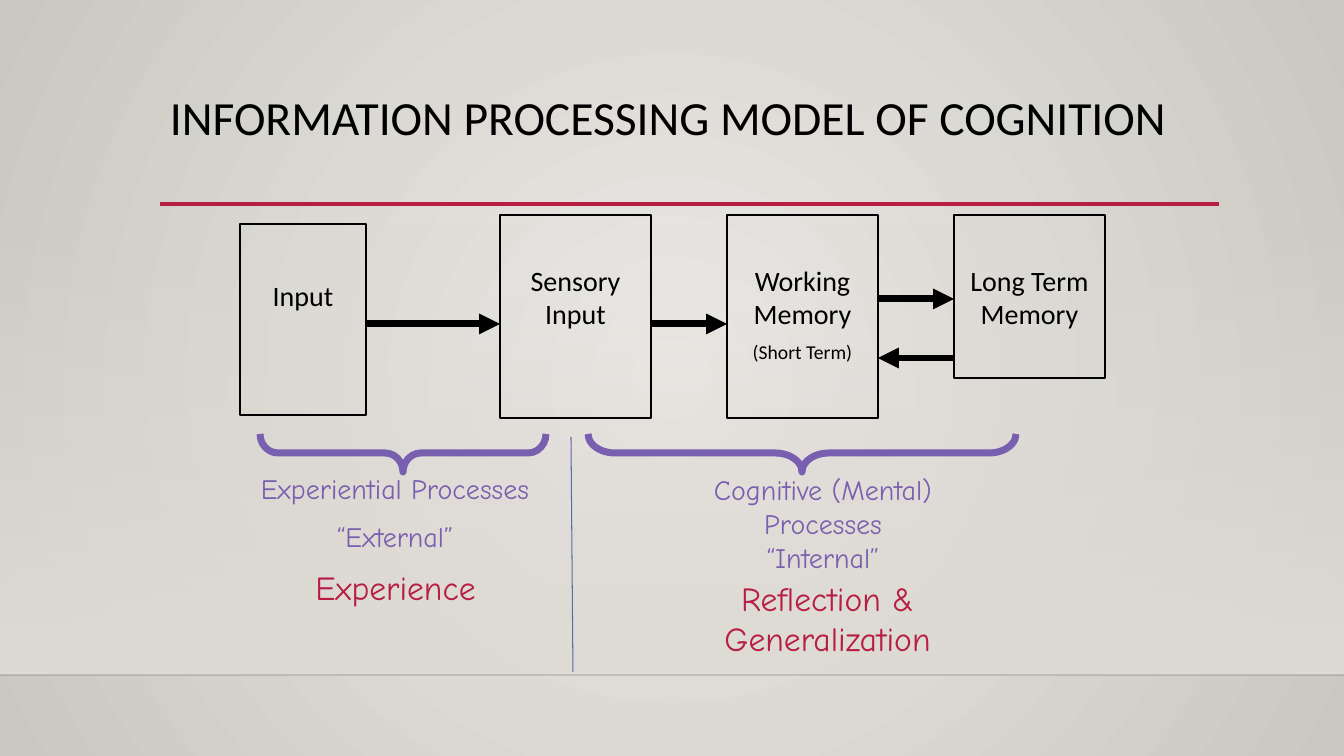
from lxml import etree
from pptx import Presentation
from pptx.dml.color import RGBColor
from pptx.enum.shapes import MSO_CONNECTOR, MSO_SHAPE
from pptx.enum.text import MSO_ANCHOR, PP_ALIGN
from pptx.oxml.ns import qn
from pptx.util import Pt

LEFT, CENTER = PP_ALIGN.LEFT, PP_ALIGN.CENTER
TOP = MSO_ANCHOR.TOP
STRAIGHT = MSO_CONNECTOR.STRAIGHT
RECTANGLE, BRACE = MSO_SHAPE.RECTANGLE, MSO_SHAPE.RIGHT_BRACE

BLACK = RGBColor(0x00, 0x00, 0x00)
CRIMSON = RGBColor(0xB7, 0x1E, 0x42)
PURPLE = RGBColor(0x79, 0x5F, 0xAF)
BLUE = RGBColor(0x58, 0x6E, 0xA6)
PALE = RGBColor(0xEC, 0xEA, 0xE7)
STONE = RGBColor(0xCA, 0xC7, 0xC1)
WALL = RGBColor(0xDF, 0xDB, 0xD5)

SANS, COMIC = "Calibri", "Comic Neue"
WIDTH, HEIGHT = 1344, 756
FLOOR = 675
INSET_X, INSET_Y = 10, 5

TITLE = ((160, 89, 1058, 116), [("INFORMATION PROCESSING MODEL OF COGNITION", 34)])

STAGES = [
    ((240, 224, 126, 191), 54, [("Input", 20)]),
    ((500, 215, 151, 203), 48, [("Sensory Input", 20)]),
    ((727, 215, 151, 203), 48, [("Working Memory", 20), ("(Short Term)", 14)]),
    ((954, 215, 151, 163), 48, [("Long Term Memory", 20)]),
]

ARROWS = [
    (366, 500, 324),
    (651, 727, 324),
    (878, 954, 299),
    (954, 878, 358),
]

BRACES = [
    ((260, 434, 286, 38), 0.47),
    ((588, 434, 428, 38), 0.71),
]

CAPTIONS = [
    ((227, 467, 336, 95), PURPLE, [("Experiential Processes", 20), ("“External”", 20)]),
    ((655, 468, 336, 112), PURPLE, [("Cognitive (Mental) Processes\v“Internal”", 20)]),
    ((219, 562, 353, 50), CRIMSON, [("Experience", 24)]),
    ((630, 573, 395, 92), CRIMSON, [("Reflection & Generalization", 24)]),
]


def px(length):
    return round(length * 914400 / 100.8)


def frame(box):
    return [px(length) for length in box]


def set_alpha(color_element, percent):
    etree.SubElement(color_element, qn("a:alpha"), val=str(percent * 1000))


def set_gradient(fill, first, last):
    fill.gradient()
    for stop, color in zip(fill.gradient_stops, (first, last)):
        stop.color.rgb = color


def write(shape, paragraphs, font, color, align=CENTER, top=INSET_Y):
    text = shape.text_frame
    text.word_wrap = True
    text.vertical_anchor = TOP
    text.margin_left = text.margin_right = px(INSET_X)
    text.margin_top, text.margin_bottom = px(top), px(INSET_Y)
    for index, (words, size) in enumerate(paragraphs):
        para = text.add_paragraph() if index else text.paragraphs[0]
        para.alignment = align
        if index:
            para.space_before = Pt(size / 2)
        for part, line in enumerate(words.split("\v")):
            if part:
                para.add_line_break()
            span = para.add_run()
            span.text = line
            span.font.name = font
            span.font.size = Pt(size)
            span.font.color.rgb = color
    return text


def add_text(page, box, paragraphs, font, color, align=CENTER):
    shape = page.shapes.add_textbox(*frame(box))
    return write(shape, paragraphs, font, color, align)


def add_outline(page, kind, box, color, weight):
    shape = page.shapes.add_shape(kind, *frame(box))
    shape.shadow.inherit = False
    shape.fill.background()
    shape.line.color.rgb = color
    shape.line.width = Pt(weight)
    return shape


def add_line(page, start, end, color, weight):
    line = page.shapes.add_connector(STRAIGHT, *frame(start + end))
    line.line.color.rgb = color
    line.line.width = Pt(weight)
    etree.SubElement(line.element.spPr, qn("a:effectLst"))
    return line


def add_arrow(page, start_x, end_x, y):
    arrow = add_line(page, (start_x, y), (end_x, y), BLACK, 5)
    etree.SubElement(arrow.line._get_or_add_ln(), qn("a:tailEnd"), type="triangle")


def add_brace(page, box, curve):
    left, top, width, height = box
    upright = (left + (width - height) / 2, top + (height - width) / 2, height, width)
    brace = add_outline(page, BRACE, upright, PURPLE, 5)
    brace.rotation = 90
    brace.adjustments[0] = curve
    brace.adjustments[1] = 0.5


def add_backdrop(page):
    set_gradient(page.background.fill, PALE, STONE)
    linear = next(page.element.iter(qn("a:lin")))
    radial = etree.Element(qn("a:path"), {"path": "circle"})
    etree.SubElement(radial, qn("a:fillToRect"), dict.fromkeys("ltrb", "50000"))
    linear.getparent().replace(linear, radial)

    wall = page.shapes.add_shape(RECTANGLE, *frame((0, 223, WIDTH, FLOOR - 223)))
    wall.shadow.inherit = False
    wall.line.fill.background()
    set_gradient(wall.fill, WALL, WALL)
    wall.fill.gradient_angle = 270
    set_alpha(next(wall.element.spPr.iter(qn("a:srgbClr"))), 0)

    edge = add_line(page, (0, FLOOR), (WIDTH, FLOOR), BLACK, 1)
    set_alpha(next(edge.element.spPr.iter(qn("a:srgbClr"))), 20)


def main():
    deck = Presentation()
    deck.slide_width, deck.slide_height = px(WIDTH), px(HEIGHT)
    page = deck.slides.add_slide(deck.slide_layouts[6])

    add_backdrop(page)
    add_line(page, (160, 204), (1219, 204), CRIMSON, 2.5)
    title = add_text(page, *TITLE, SANS, BLACK, LEFT)
    title.paragraphs[0].line_spacing = 0.9

    for box, top, paragraphs in STAGES:
        stage = add_outline(page, RECTANGLE, box, BLACK, 2)
        write(stage, paragraphs, SANS, BLACK, top=top)
    for arrow in ARROWS:
        add_arrow(page, *arrow)

    add_line(page, (571, 437), (573, 672), BLUE, 0.75)
    for brace in BRACES:
        add_brace(page, *brace)
    for box, color, paragraphs in CAPTIONS:
        add_text(page, box, paragraphs, COMIC, color)

    deck.save("out.pptx")


if __name__ == "__main__":
    main()
